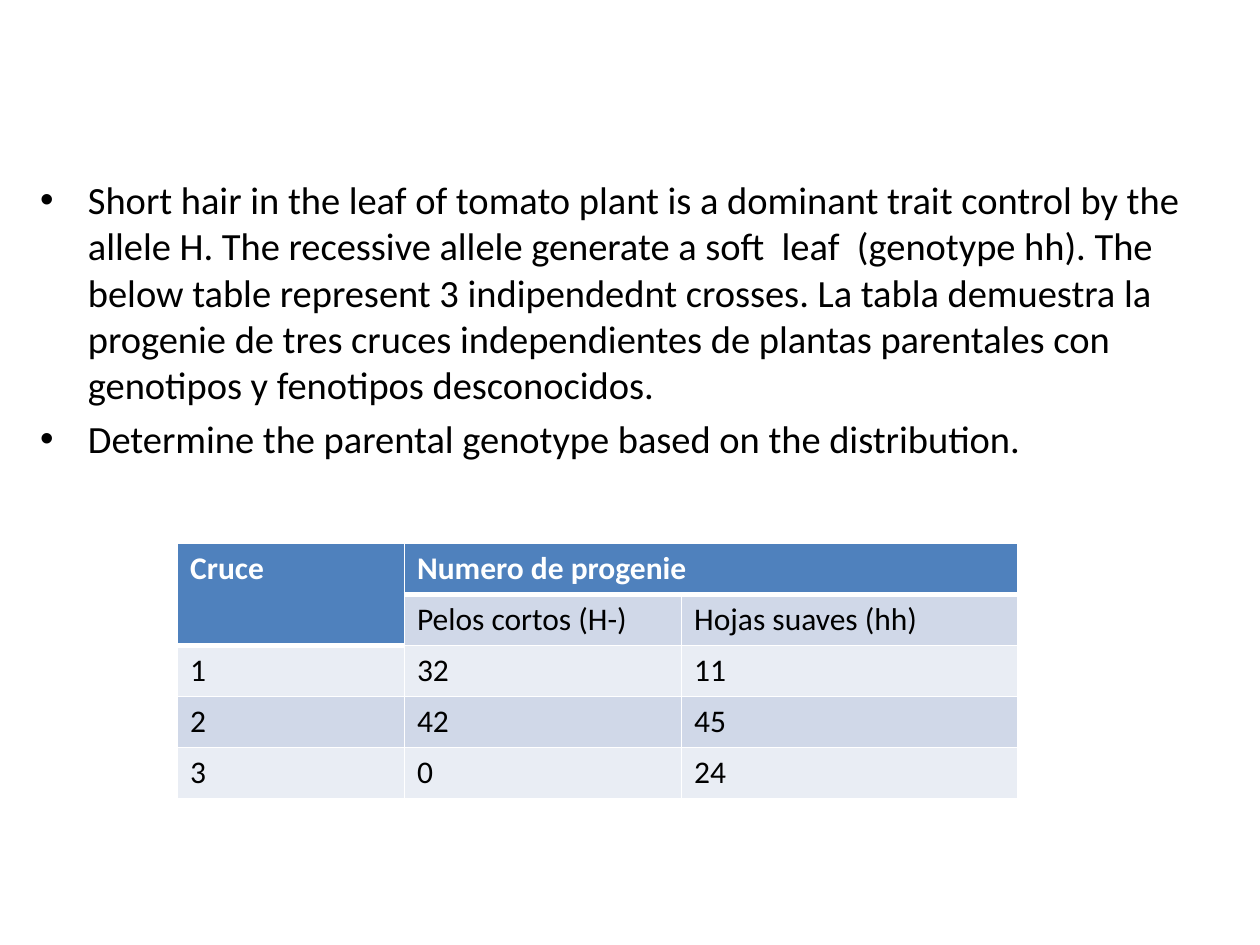
"""Build a slide with a genetics exercise and its table of crosses."""
from dataclasses import dataclass

from lxml.etree import SubElement
from pptx import Presentation
from pptx.dml.color import RGBColor
from pptx.oxml.ns import qn
from pptx.util import Emu, Inches, Pt

FONT = "Calibri"
BLACK, WHITE, BLUE = "000000", "FFFFFF", "4F81BD"
BANDS = ("E9EDF4", "D0D8E8")
SLIDE_WIDTH, SLIDE_HEIGHT = Inches(10), Inches(7.5)
HANGING_INDENT = Inches(0.38)
COLUMN_WIDTHS = (1.8, 2.2, 2.67)
THIN, THICK = Pt(1), Pt(3)

EXERCISE = (
    "Short hair in the leaf of tomato plant is a dominant trait control by the "
    "allele H. The recessive allele generate a soft  leaf  (genotype hh). The "
    "below table represent 3 indipendednt crosses. La tabla demuestra la "
    "progenie de tres cruces independientes de plantas parentales con "
    "genotipos y fenotipos desconocidos.",
    "Determine the parental genotype based on the distribution.",
)
CROSSES = (
    ("Cruce", "Numero de progenie", ""),
    ("", "Pelos cortos (H-)", "Hojas suaves (hh)"),
    ("1", "32", "11"),
    ("2", "42", "45"),
    ("3", "0", "24"),
)


@dataclass(frozen=True)
class Area:
    """A rectangle in shares of the slide's size."""

    left: float
    top: float
    width: float
    height: float

    def lengths(self) -> tuple:
        """Return left, top, width and height as lengths."""
        return (
            Emu(round(self.left * SLIDE_WIDTH)),
            Emu(round(self.top * SLIDE_HEIGHT)),
            Emu(round(self.width * SLIDE_WIDTH)),
            Emu(round(self.height * SLIDE_HEIGHT)),
        )


EXERCISE_AREA = Area(0.022, 0.18, 0.956, 0.59)
TABLE_AREA = Area(0.141, 0.575, 0.667, 0.27)


def color(value: str) -> RGBColor:
    """Turn a hex string into a colour."""
    return RGBColor.from_string(value)


def write(para, text: str, *, size: float, ink: str = BLACK, bold: bool = False) -> None:
    """Add a formatted span of text to a paragraph."""
    span = para.add_run()
    span.text = text
    span.font.name = FONT
    span.font.size = Pt(size)
    span.font.bold = bold
    span.font.color.rgb = color(ink)


def add_bullet(para) -> None:
    """Give a paragraph a round bullet and a hanging indent."""
    properties = para._p.get_or_add_pPr()
    properties.set("marL", str(HANGING_INDENT))
    properties.set("indent", str(-HANGING_INDENT))
    SubElement(properties, qn("a:buFont"), typeface="Arial")
    SubElement(properties, qn("a:buChar"), char="•")


def add_exercise(page, area: Area) -> None:
    """Draw the bulleted text of the exercise."""
    frame = page.shapes.add_textbox(*area.lengths()).text_frame
    frame.word_wrap = True
    for index, text in enumerate(EXERCISE):
        para = frame.add_paragraph() if index else frame.paragraphs[0]
        add_bullet(para)
        if index:
            para.space_before = Pt(4.4)
        write(para, text, size=22)


def is_header(row: int, column: int) -> bool:
    """Tell whether a cell belongs to the blue heading."""
    return row == 0 or (row == 1 and column == 0)


def add_borders(cell, row: int, column: int) -> None:
    """Draw white cell borders, thick along the foot of the heading."""
    ends_header = is_header(row, column) and (column == 0 or row == 0)
    below_header = not is_header(row, column) and is_header(row - 1, column)
    widths = {
        "a:lnL": THIN,
        "a:lnR": THIN,
        "a:lnT": THICK if below_header else THIN,
        "a:lnB": THICK if ends_header else THIN,
    }
    properties = cell._tc.get_or_add_tcPr()
    for tag, width in widths.items():
        line = SubElement(properties, qn(tag), w=str(width))
        fill = SubElement(line, qn("a:solidFill"))
        SubElement(fill, qn("a:srgbClr"), val=WHITE)


def add_crosses(page, area: Area) -> None:
    """Draw the table of crosses with its merged heading."""
    frame = page.shapes.add_table(len(CROSSES), len(COLUMN_WIDTHS), *area.lengths())
    table = frame.table
    for column, width in zip(table.columns, COLUMN_WIDTHS):
        column.width = Inches(width)
    table.cell(0, 0).merge(table.cell(1, 0))
    table.cell(0, 1).merge(table.cell(0, 2))
    for row, texts in enumerate(CROSSES):
        for column, text in enumerate(texts):
            cell = table.cell(row, column)
            header = is_header(row, column)
            add_borders(cell, row, column)
            cell.fill.solid()
            cell.fill.fore_color.rgb = color(BLUE if header else BANDS[row % 2])
            if text:
                ink = WHITE if header else BLACK
                write(cell.text_frame.paragraphs[0], text, size=18, ink=ink, bold=header)


def main() -> None:
    """Build and save the deck."""
    deck = Presentation()
    deck.slide_width, deck.slide_height = SLIDE_WIDTH, SLIDE_HEIGHT
    page = deck.slides.add_slide(deck.slide_layouts[6])
    add_exercise(page, EXERCISE_AREA)
    add_crosses(page, TABLE_AREA)
    deck.save("out.pptx")


if __name__ == "__main__":
    main()
